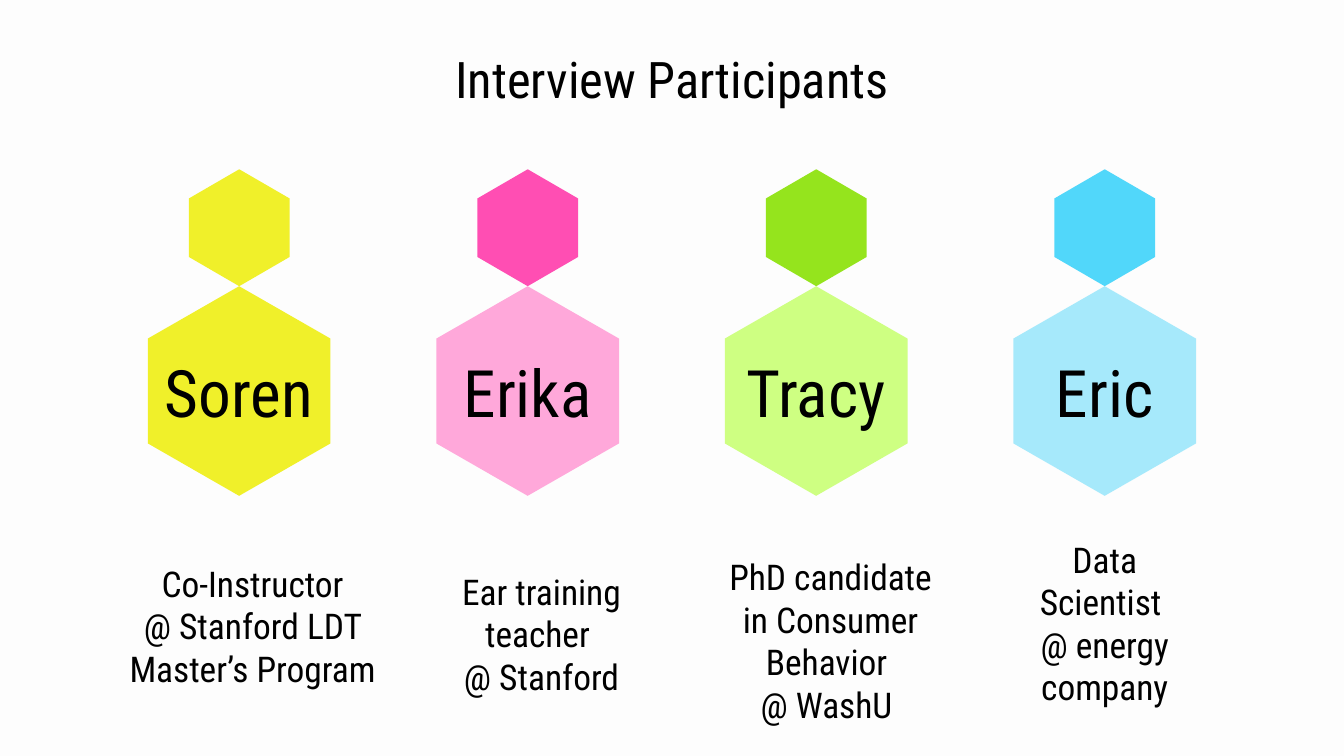
from lxml import etree
from pptx import Presentation
from pptx.dml.color import RGBColor
from pptx.enum.text import MSO_ANCHOR, PP_ALIGN
from pptx.oxml.ns import qn
from pptx.util import Inches, Pt

TITLE = "Interview Participants"
PEOPLE = [
    {"name": "Soren", "head": "F0F02A", "body": "F0F02A", "opacity": 100,
     "role": ["Co-Instructor", "@ Stanford LDT Master’s Program"],
     "role_box": (0.7, 4.22, 2.36, 0.87)},
    {"name": "Erika", "head": "FF4EB3", "body": "FFA8DA", "opacity": 100,
     "role": ["Ear training teacher ", "@ Stanford"],
     "role_box": (3.25, 4.33, 1.56, 0.77)},
    {"name": "Tracy", "head": "95E41D", "body": "CEFF82", "opacity": 100,
     "role": ["PhD candidate in Consumer Behavior ", "@ WashU "],
     "role_box": (5.29, 4.38, 1.78, 0.77)},
    {"name": "Eric", "head": "51D7FA", "body": "51D7FA", "opacity": 50,
     "role": ["Data Scientist ", "@ energy company"],
     "role_box": (7.44, 4.25, 1.56, 0.77)},
]
THEME = {"font": "Roboto Condensed", "ink": "000000", "paper": "FDFDFD",
         "title": 27, "name": 35, "role": 19}
SLIDE_WIDTH = 10
SLIDE_HEIGHT = SLIDE_WIDTH * 9 / 16
FIRST_CENTER, LAST_CENTER = 1.78, 8.22
HEAD_TOP, HEAD_SIZE = 1.26, (0.75, 0.87)
BODY_SIZE = (1.36, 1.56)


def color(value):
    return RGBColor.from_string(value)


def write(shape, lines, size):
    frame = shape.text_frame
    frame_format = {"word_wrap": True, "vertical_anchor": MSO_ANCHOR.MIDDLE}
    for side in ("left", "right", "top", "bottom"):
        frame_format[f"margin_{side}"] = Inches(0.1)
    for key, value in frame_format.items():
        setattr(frame, key, value)
    for index, line in enumerate(lines):
        para = frame.paragraphs[0] if index == 0 else frame.add_paragraph()
        para.alignment = PP_ALIGN.CENTER
        span = para.add_run()
        span.text = line
        for key, value in {"name": THEME["font"], "size": Pt(size)}.items():
            setattr(span.font, key, value)
        span.font.color.rgb = color(THEME["ink"])


def add_text(page, place, lines, size):
    box = page.shapes.add_textbox(*map(Inches, place))
    write(box, lines, size)


def add_hexagon(page, center, top, size, fill, opacity=100):
    width, height = size
    left, right = center - width / 2, center + width / 2
    upper, lower = top + height / 4, top + height * 3 / 4
    points = [(center, top), (left, upper), (left, lower),
              (center, top + height), (right, lower), (right, upper)]
    start, *rest = [(Inches(x), Inches(y)) for x, y in points]
    builder = page.shapes.build_freeform(*start)
    builder.add_line_segments(rest, close=True)
    hexagon = builder.convert_to_shape()
    hexagon.shadow.inherit = False
    hexagon.fill.solid()
    hexagon.fill.fore_color.rgb = color(fill)
    hexagon.line.fill.background()
    if opacity < 100:
        tint = hexagon.element.spPr.find(qn("a:solidFill"))[0]
        etree.SubElement(tint, qn("a:alpha")).set("val", str(opacity * 1000))
    return hexagon


def main():
    deck = Presentation()
    deck.slide_width, deck.slide_height = Inches(SLIDE_WIDTH), Inches(SLIDE_HEIGHT)
    page = deck.slides.add_slide(deck.slide_layouts[6])
    page.background.fill.solid()
    page.background.fill.fore_color.rgb = color(THEME["paper"])

    add_text(page, (0.55, 0.33, 8.9, 0.51), [TITLE], THEME["title"])
    pitch = (LAST_CENTER - FIRST_CENTER) / (len(PEOPLE) - 1)
    for index, person in enumerate(PEOPLE):
        center = FIRST_CENTER + index * pitch
        body = add_hexagon(page, center, HEAD_TOP + HEAD_SIZE[1], BODY_SIZE,
                           person["body"], person["opacity"])
        write(body, [person["name"]], THEME["name"])
        add_text(page, person["role_box"], person["role"], THEME["role"])
        add_hexagon(page, center, HEAD_TOP, HEAD_SIZE, person["head"])
    deck.save("out.pptx")


if __name__ == "__main__":
    main()
